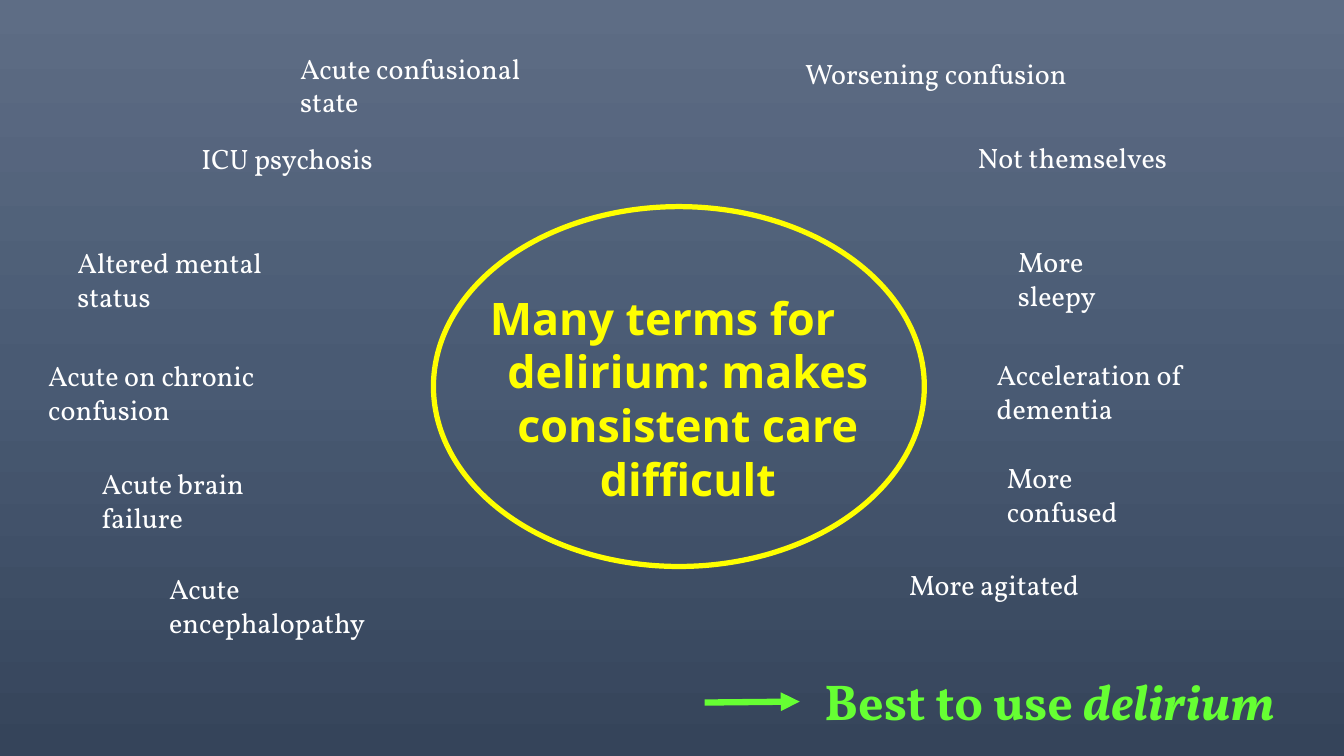
import copy

import pptx
import pptx.dml.color
import pptx.enum.shapes
import pptx.enum.text
import pptx.oxml
import pptx.oxml.ns
import pptx.util

# Grid: 40 columns by 30 rows over the whole slide
SLIDE_WIDTH = pptx.util.Inches(13.33)
SLIDE_HEIGHT = pptx.util.Inches(7.5)
COLUMN = SLIDE_WIDTH / 40
ROW = SLIDE_HEIGHT / 30

WHITE, YELLOW, GREEN = "FFFFFF", "FFFF00", "66FF33"
BACKGROUND_STOPS = [(0, "5E6D85"), (0.5, "495A73"), (1, "35445A")]
SERIF, SANS = "Vollkorn", "Open Sans"
TERM_HEIGHT = 1.76

# Term, left column, top row, width in columns
CLINICAL_TERMS = [
    ("Acute confusional state", 8.64, 1.84, 9),
    ("ICU psychosis", 5.7, 5.4, 10.3),
    ("Altered mental status", 2.01, 9.56, 8.35),
    ("Acute on chronic confusion", 1.14, 14.04, 10.3),
    ("Acute brain failure", 2.73, 18.32, 7.3),
    ("Acute encephalopathy", 4.74, 22.48, 8.6),
]
EVERYDAY_TERMS = [
    ("Worsening confusion", 23.67, 2.04, 10.3),
    ("Not themselves", 28.8, 5.36, 10.3),
    ("More sleepy", 30, 9.52, 4.9),
    ("Acceleration of dementia", 29.37, 14, 9.6),
    ("More confused", 29.67, 18.08, 5.9),
    ("More agitated", 26.76, 22.32, 5.82),
]


def color(hex_string):
    return pptx.dml.color.RGBColor.from_string(hex_string)


def across(columns):
    return round(columns * COLUMN)


def down(rows):
    return round(rows * ROW)


def paint_background(page):
    fill = page.background.fill
    fill.gradient()
    fill.gradient_angle = 270
    first = next(page._element.iter(pptx.oxml.ns.qn("a:gs")))
    first.addnext(copy.deepcopy(first))
    for stop, (position, shade) in zip(fill.gradient_stops, BACKGROUND_STOPS):
        stop.position = position
        stop.color.rgb = color(shade)


def add_text(page, spans, left, top, width, height, size, font, shade, bold=False):
    """Add a one-paragraph text box; spans are (text, italic) pairs."""
    box = page.shapes.add_textbox(across(left), down(top), across(width), down(height))
    box.text_frame.word_wrap = True
    box.text_frame.auto_size = pptx.enum.text.MSO_AUTO_SIZE.SHAPE_TO_FIT_TEXT
    para = box.text_frame.paragraphs[0]
    for text, italic in spans:
        span = para.add_run()
        span.text = text
        span.font.size = pptx.util.Pt(size)
        span.font.name = font
        span.font.color.rgb = color(shade)
        span.font.bold = bold
        span.font.italic = italic
    return para


def add_ring(page, left, top, width, height, shade):
    ring = page.shapes.add_shape(
        pptx.enum.shapes.MSO_SHAPE.OVAL,
        across(left), down(top), across(width), down(height))
    ring.shadow.inherit = False
    ring.fill.background()
    ring.line.color.rgb = color(shade)
    ring.line.width = pptx.util.Pt(3.75)


def add_arrow(page, start, end, shade):
    arrow = page.shapes.add_connector(
        pptx.enum.shapes.MSO_CONNECTOR.STRAIGHT,
        across(start[0]), down(start[1]), across(end[0]), down(end[1]))
    arrow.line.color.rgb = color(shade)
    arrow.line.width = pptx.util.Pt(4.5)
    head = pptx.oxml.parse_xml(
        f'<a:tailEnd {pptx.oxml.ns.nsdecls("a")} type="triangle"/>')
    arrow.line._get_or_add_ln().append(head)
    no_shadow = pptx.oxml.parse_xml(f'<a:effectLst {pptx.oxml.ns.nsdecls("a")}/>')
    arrow._element.spPr.append(no_shadow)


def main():
    deck = pptx.Presentation()
    deck.slide_width, deck.slide_height = SLIDE_WIDTH, SLIDE_HEIGHT
    page = deck.slides.add_slide(deck.slide_layouts[6])
    paint_background(page)

    # Terms around the centre
    for term, left, top, width in CLINICAL_TERMS + EVERYDAY_TERMS:
        add_text(page, [(term, False)], left, top, width, TERM_HEIGHT, 20, SERIF, WHITE)

    # Central message with a hanging indent, inside the ring
    message = "Many terms for delirium: makes consistent care difficult"
    para = add_text(page, [(message, False)], 12.24, 11.32, 14.97, 11.16,
                    32, SANS, YELLOW, bold=True)
    para.alignment = pptx.enum.text.PP_ALIGN.CENTER
    indent = pptx.util.Inches(0.5)
    properties = para._p.get_or_add_pPr()
    properties.set("marL", str(indent))
    properties.set("indent", str(-indent))
    add_ring(page, 12.9, 8.2, 14.61, 14.28, YELLOW)

    # Conclusion
    add_arrow(page, (20.97, 27.88), (23.8, 27.84), GREEN)
    add_text(page, [("Best to use ", False), ("delirium", True)],
             24.24, 26.4, 14.67, 2.84, 36, SERIF, GREEN, bold=True)

    deck.save("out.pptx")


if __name__ == "__main__":
    main()
